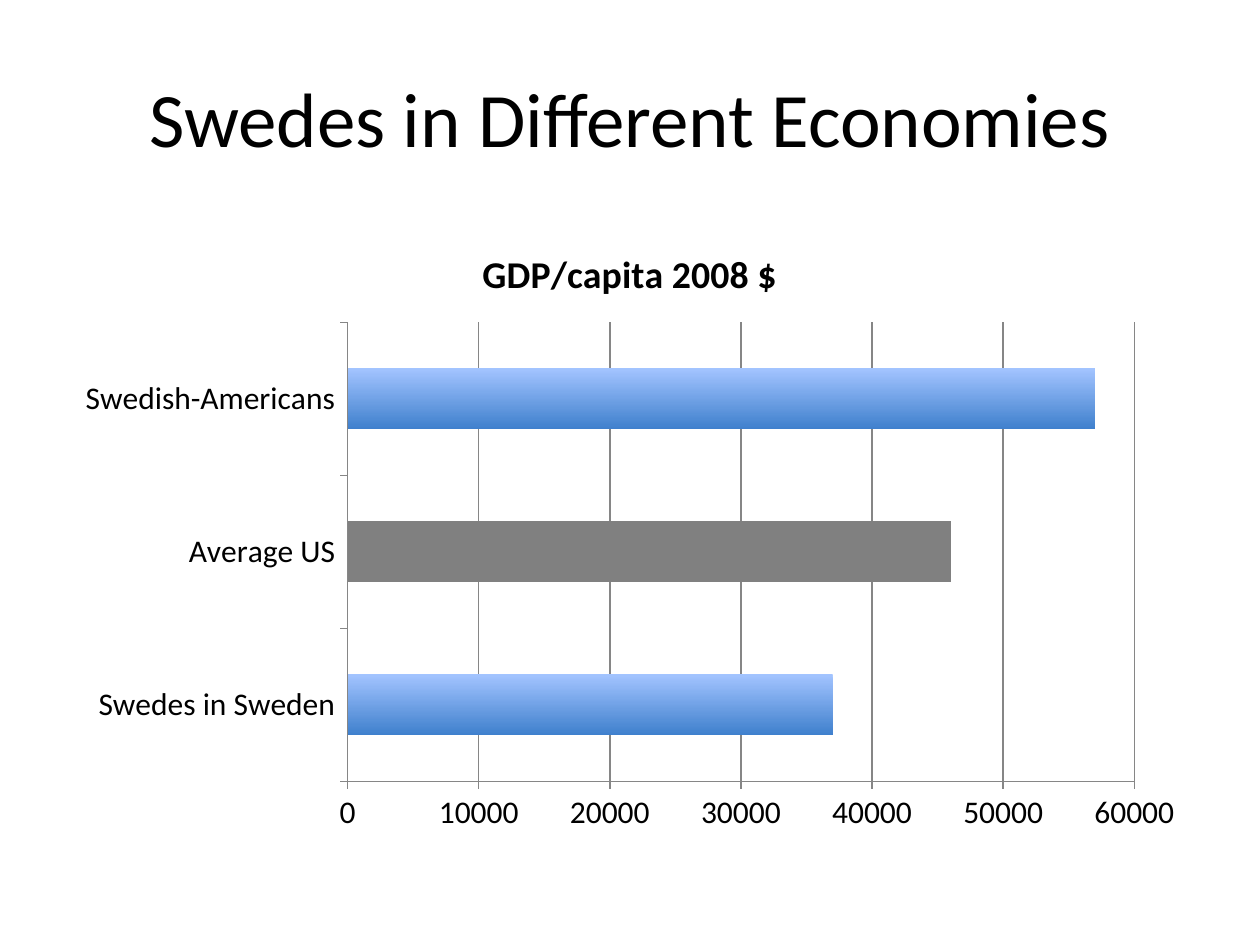
from pptx import Presentation
from pptx import util as u
from pptx.chart import data
from pptx.dml import color
from pptx.enum import chart as charts, text

FONT = "Calibri"
HEADING = "GDP/capita 2008 $"
INCOMES = {"Swedes in Sweden": 37000, "Average US": 46000, "Swedish-Americans": 57000}


def rgb(code):
    return color.RGBColor.from_string(code)


def style_font(font, size, bold=False):
    font.name = FONT
    font.size = u.Pt(size)
    font.bold = bold
    font.color.rgb = rgb("000000")


def style_line(line):
    line.color.rgb = rgb("868686")
    line.width = u.Pt(0.75)


def place_title(page, left, top, width, height):
    title = page.shapes.title
    title.left, title.top, title.width, title.height = left, top, width, height
    title.text_frame.text = "Swedes in Different Economies"
    title.text_frame.vertical_anchor = text.MSO_ANCHOR.MIDDLE
    para = title.text_frame.paragraphs[0]
    para.alignment = text.PP_ALIGN.CENTER
    style_font(para.runs[0].font, 44)


def style_axis(axis):
    axis.major_tick_mark = charts.XL_TICK_MARK.OUTSIDE
    axis.minor_tick_mark = charts.XL_TICK_MARK.NONE
    style_line(axis.format.line)


def fill_bars(plot):
    plot.gap_width = 150
    plot.vary_by_categories = False
    series = plot.series[0]
    series.invert_if_negative = False
    fill = series.format.fill
    fill.gradient()
    fill.gradient_angle = 270
    for stop, code in zip(fill.gradient_stops, ("A3C4FF", "3F80CD")):
        stop.color.rgb = rgb(code)
    average = series.points[list(INCOMES).index("Average US")].format.fill
    average.solid()
    average.fore_color.rgb = rgb("808080")


def place_income_chart(page, left, top, width, height):
    incomes = data.CategoryChartData(number_format="General")
    incomes.categories = list(INCOMES)
    incomes.add_series(HEADING, list(INCOMES.values()))
    chart = page.shapes.add_chart(
        charts.XL_CHART_TYPE.BAR_CLUSTERED, left, top, width, height, incomes
    ).chart
    style_font(chart.font, 18)
    chart.has_legend = False
    chart.has_title = True
    chart.chart_title.include_in_layout = False
    heading = chart.chart_title.text_frame
    heading.text = HEADING
    style_font(heading.paragraphs[0].runs[0].font, 21.6, bold=True)
    style_axis(chart.category_axis)
    values = chart.value_axis
    style_axis(values)
    values.minimum_scale, values.maximum_scale, values.major_unit = 0, 60000, 10000
    values.has_major_gridlines = True
    style_line(values.major_gridlines.format.line)
    fill_bars(chart.plots[0])


def main():
    deck = Presentation()
    deck.slide_width, deck.slide_height = u.Cm(25.4), u.Cm(19.05)
    page = deck.slides.add_slide(deck.slide_layouts.get_by_name("Title Only"))
    margin = u.Cm(1.27)
    width = deck.slide_width - 2 * margin
    place_title(page, margin, u.Cm(0.76), width, u.Cm(3.18))
    place_income_chart(page, margin, u.Cm(4.45), width, u.Cm(12.57))
    deck.save("out.pptx")


if __name__ == "__main__":
    main()
